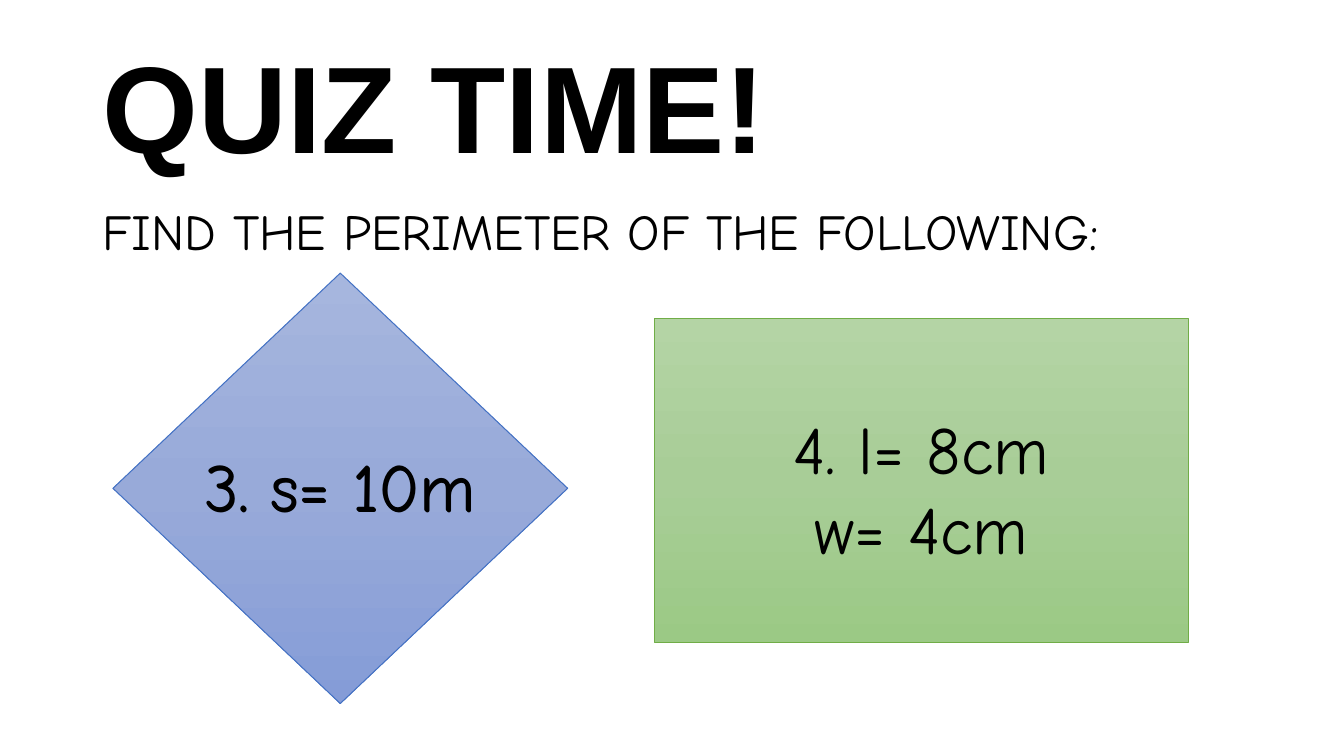
from copy import deepcopy

from pptx import Presentation
from pptx import util as u
from pptx.dml.color import RGBColor
from pptx.enum import shapes, text
from pptx.oxml.ns import qn


def rgb(value):
    return RGBColor.from_string(value)


class QuizSlide:
    heading_font = "Arial"
    body_font = "Comic Neue"
    ink = "000000"

    def __init__(self, prs):
        self.s = prs.slides.add_slide(prs.slide_layouts[6])

    def label(self, box, content, size, font=body_font, bold=False,
              align=text.PP_ALIGN.LEFT, anchor=text.MSO_ANCHOR.TOP, spacing=1.0):
        tf = self.s.shapes.add_textbox(*map(u.Inches, box)).text_frame
        tf.word_wrap = True
        tf.vertical_anchor = anchor
        tf.text = content
        for p in tf.paragraphs:
            p.alignment = align
            p.line_spacing = spacing
            for r in p.runs:
                r.font.name = font
                r.font.size = u.Pt(size)
                r.font.bold = bold
                r.font.color.rgb = rgb(self.ink)

    def figure(self, kind, box, colors, outline):
        sp = self.s.shapes.add_shape(kind, *map(u.Inches, box))
        sp.shadow.inherit = False
        sp.line.color.rgb = rgb(outline)
        sp.line.width = u.Pt(0.75)
        # Three-stop gradient running from top to bottom
        sp.fill.gradient()
        sp.fill.gradient_angle = 270
        stops = sp.element.spPr.find(".//" + qn("a:gsLst"))
        stops.insert(1, deepcopy(stops[0]))
        for stop, color, position in zip(sp.fill.gradient_stops, colors, (0, 0.5, 1)):
            stop.color.rgb = rgb(color)
            stop.position = position

    def measure(self, box, content):
        self.label(box, content, 48, align=text.PP_ALIGN.CENTER)


def main():
    prs = Presentation()
    prs.slide_width, prs.slide_height = u.Inches(13.33), u.Inches(7.5)
    quiz = QuizSlide(prs)

    # Heading and instruction
    quiz.label((0.92, 0.4, 11.5, 1.45), "QUIZ TIME!", 88, font=quiz.heading_font,
               bold=True, anchor=text.MSO_ANCHOR.MIDDLE, spacing=0.9)
    quiz.label((0.92, 2, 11.5, 4.76), "FIND THE PERIMETER OF THE FOLLOWING:", 36,
               spacing=0.9)

    # Question 3: the label is doubled with a tiny offset
    quiz.figure(shapes.MSO_SHAPE.DIAMOND, (1.12, 2.71, 4.51, 4.27),
                ("A6B6DE", "98AAD9", "859CD7"), "4472C4")
    for offset in (0, 0.01):
        quiz.measure((1.49 + offset, 4.36 + offset, 3.76, 0.91), "3. s= 10m")

    # Question 4
    quiz.figure(shapes.MSO_SHAPE.RECTANGLE, (6.49, 3.16, 5.3, 3.21),
                ("B4D4A5", "A8CD97", "9BC985"), "70AD47")
    quiz.measure((7.26, 3.99, 3.76, 1.72), "4. l= 8cm\nw= 4cm")

    prs.save("out.pptx")


if __name__ == "__main__":
    main()
